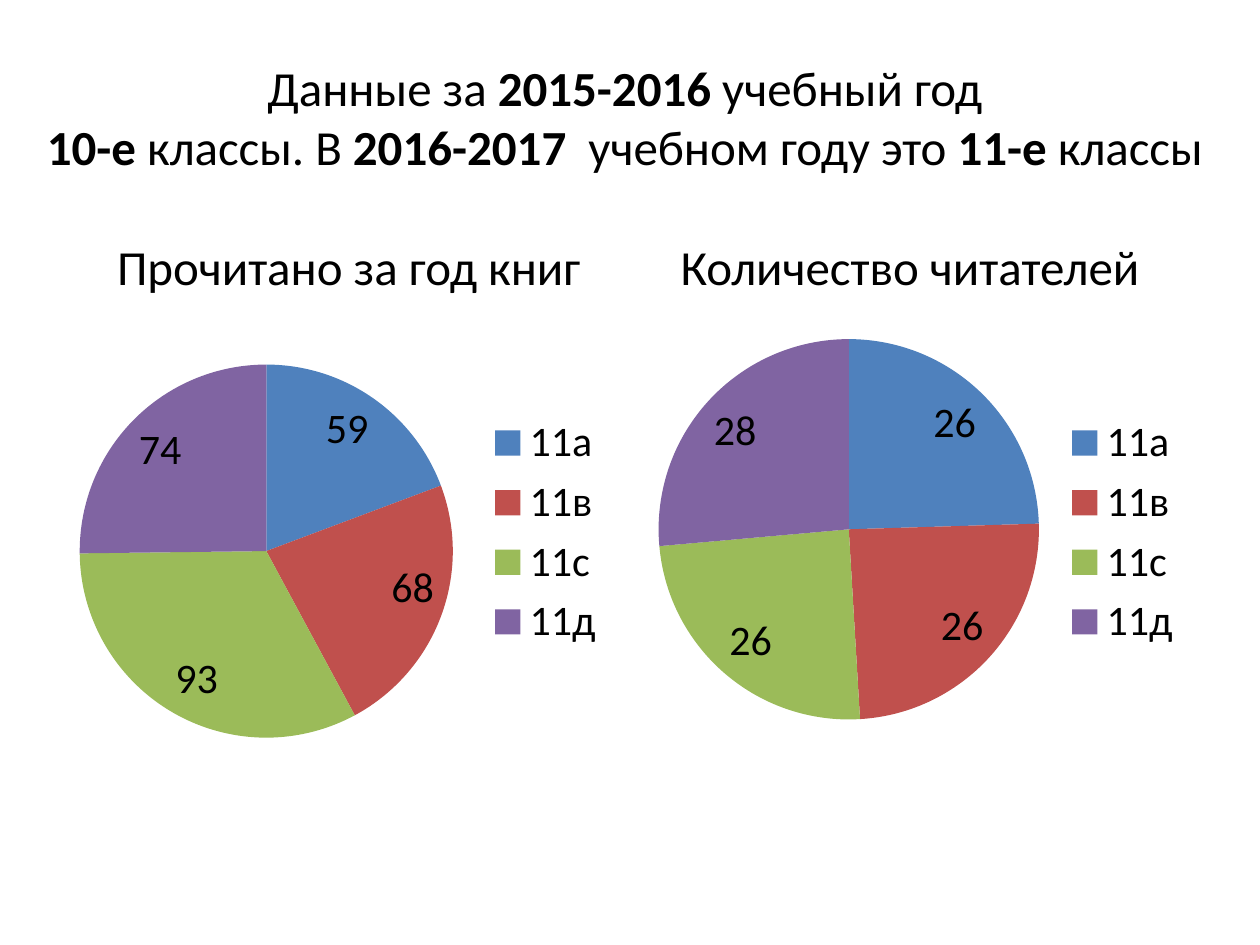
from dataclasses import dataclass

from lxml.etree import SubElement
from pptx import Presentation
from pptx.chart.data import CategoryChartData
from pptx.dml.color import RGBColor
from pptx.enum.chart import XL_CHART_TYPE, XL_LABEL_POSITION, XL_LEGEND_POSITION
from pptx.enum.text import MSO_ANCHOR, PP_ALIGN
from pptx.oxml import parse_xml
from pptx.oxml.ns import nsdecls, qn
from pptx.util import Cm, Pt


@dataclass(frozen=True)
class Theme:
    font: str = "Calibri"
    text: RGBColor = RGBColor(0x00, 0x00, 0x00)
    background: RGBColor = RGBColor(0xFF, 0xFF, 0xFF)
    heading_size: Pt = Pt(28)
    chart_size: Pt = Pt(24)
    slices: tuple = ("4F81BD", "C0504D", "9BBB59", "8064A2")


@dataclass(frozen=True)
class Pie:
    left: Cm
    values: tuple
    plot: dict  # plot area as fractions of the chart frame
    labels: tuple = ()  # wording shown in place of the values


THEME = Theme()
CLASSES = ("11а", "11в", "11с", "11д")
PIES = (
    Pie(Cm(1.27), (49, 58, 83, 64), dict(x=0.03, y=0.23, w=0.67, h=0.6),
        ("59", "68", "93", "74")),
    Pie(Cm(12.9), (26, 26, 26, 28), dict(x=0.03, y=0.19, w=0.69, h=0.61)),
)
# Each title line is a list of (wording, bold)
TITLE = (
    (("Данные за ", False), ("2015-2016", True), (" учебный год", False)),
    (("10-е ", True), ("классы. В ", False), ("2016-2017", True),
     ("  учебном году это ", False), ("11-е", True), (" классы", False)),
)


def style_font(font, size: Pt) -> None:
    font.name = THEME.font
    font.size = size
    font.color.rgb = THEME.text


def add_title(page) -> None:
    box = page.shapes.add_textbox(Cm(0.43), Cm(0.76), Cm(24.33), Cm(3.18))
    frame = box.text_frame
    frame.word_wrap = True
    frame.vertical_anchor = MSO_ANCHOR.MIDDLE
    paragraph = frame.paragraphs[0]
    paragraph.alignment = PP_ALIGN.CENTER
    style_font(paragraph.font, THEME.heading_size)
    for index, line in enumerate(TITLE):
        if index:
            paragraph.add_line_break()
        for wording, bold in line:
            span = paragraph.add_run()
            span.text = wording
            span.font.bold = bold
            style_font(span.font, THEME.heading_size)


def add_captions(page) -> None:
    box = page.shapes.add_textbox(Cm(2.11), Cm(4.65), Cm(21.39), Cm(1.45))
    box.text_frame.word_wrap = True
    paragraph = box.text_frame.paragraphs[0]
    paragraph.text = "Прочитано за год книг\tКоличество читателей"
    style_font(paragraph.font, THEME.heading_size)
    # The tab stop starts the second caption above the second chart
    properties = paragraph._p.get_or_add_pPr()
    stops = parse_xml(f'<a:tabLst {nsdecls("a")}/>')
    SubElement(stops, qn("a:tab"), pos=str(Cm(11.36)), algn="l")
    properties.insert(0, stops)


def place_plot(chart, plot: dict) -> None:
    area = chart._chartSpace.chart.plotArea
    for old in area.findall(qn("c:layout")):
        area.remove(old)
    layout = parse_xml(f'<c:layout {nsdecls("c")}/>')
    manual = SubElement(layout, qn("c:manualLayout"))
    settings = dict(layoutTarget="inner", xMode="edge", yMode="edge", **plot)
    for name, value in settings.items():
        SubElement(manual, qn(f"c:{name}"), val=str(value))
    area.insert(0, layout)


def add_pie(page, pie: Pie) -> None:
    data = CategoryChartData()
    data.categories = CLASSES
    data.add_series("Series 1", pie.values)
    chart = page.shapes.add_chart(
        XL_CHART_TYPE.PIE, pie.left, Cm(4.45), Cm(11.23), Cm(12.57), data).chart
    style_font(chart.font, THEME.chart_size)
    chart.has_title = False
    chart.has_legend = True
    chart.legend.position = XL_LEGEND_POSITION.RIGHT
    chart.legend.include_in_layout = False
    place_plot(chart, pie.plot)

    # Slices and their labels
    plot = chart.plots[0]
    plot.vary_by_categories = True
    series = plot.series[0]
    labels = series.data_labels
    labels.show_value = True
    labels.show_percentage = False
    labels.position = XL_LABEL_POSITION.INSIDE_END
    style_font(labels.font, THEME.chart_size)
    for index, color in enumerate(THEME.slices):
        fill = series.points[index].format.fill
        fill.solid()
        fill.fore_color.rgb = RGBColor.from_string(color)
    for index, wording in enumerate(pie.labels):
        label = series.points[index].data_label
        paragraph = label.text_frame.paragraphs[0]
        paragraph.text = wording
        style_font(paragraph.runs[0].font, THEME.chart_size)
        label.position = XL_LABEL_POSITION.INSIDE_END


def main() -> None:
    deck = Presentation()
    deck.slide_width, deck.slide_height = Cm(25.4), Cm(19.05)
    page = deck.slides.add_slide(deck.slide_layouts[6])
    page.background.fill.solid()
    page.background.fill.fore_color.rgb = THEME.background
    add_title(page)
    for pie in PIES:
        add_pie(page, pie)
    add_captions(page)
    deck.save("out.pptx")


if __name__ == "__main__":
    main()
